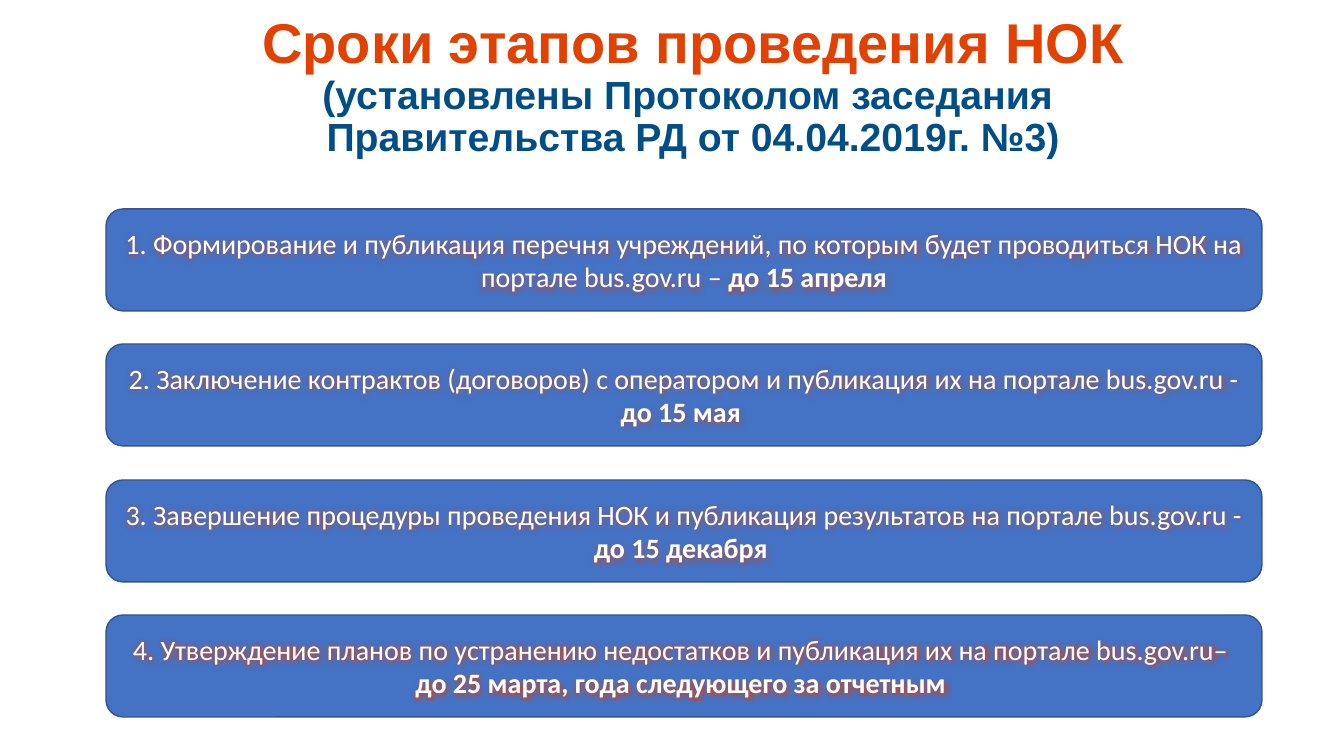
import pptx
import pptx.dml.color
import pptx.enum.shapes
import pptx.enum.text
import pptx.oxml
import pptx.oxml.ns
import pptx.util
from dataclasses import dataclass

EMU_PER_PX = 914400 / 100.8


def px(n):
    return pptx.util.Emu(round(n * EMU_PER_PX))


def rgb(value):
    return pptx.dml.color.RGBColor.from_string(value)


@dataclass
class Theme:
    heading: str = "E14101"
    subheading: str = "004E86"
    outline: str = "FFFFFF"
    box_fill: str = "4472C4"
    box_line: str = "325491"
    box_text: str = "FFFFFF"
    glow: str = "D0401A"
    title_font: str = "Arial"
    body_font: str = "Calibri"
    heading_size: int = 40
    subheading_size: int = 28
    body_size: int = 20


class Deck:
    def __init__(self, theme):
        self.theme = theme
        self.prs = pptx.Presentation()
        self.prs.slide_width, self.prs.slide_height = px(1344), px(756)
        self.s = None

    def add_slide(self):
        self.s = self.prs.slides.add_slide(self.prs.slide_layouts[5])

    def place(self, sp, x, y, w, h):
        box = {"left": x, "top": y, "width": w, "height": h}
        for name, value in box.items():
            setattr(sp, name, px(value))

    def frame(self, sp):
        tf = sp.text_frame
        fmt = {"word_wrap": True,
               "auto_size": pptx.enum.text.MSO_AUTO_SIZE.NONE,
               "vertical_anchor": pptx.enum.text.MSO_ANCHOR.MIDDLE}
        for name, value in fmt.items():
            setattr(tf, name, value)
        return tf

    def paragraph(self, tf, i, spacing=1.0):
        p = tf.add_paragraph() if i else tf.paragraphs[0]
        fmt = {"alignment": pptx.enum.text.PP_ALIGN.CENTER,
               "line_spacing": spacing}
        for name, value in fmt.items():
            setattr(p, name, value)
        return p

    def run(self, p, text, color, **fmt):
        r = p.add_run()
        r.text = text
        for name, value in fmt.items():
            setattr(r.font, name, value)
        r.font.color.rgb = rgb(color)
        return r.font.fill, r.font

    def outline(self, font):
        ln = pptx.oxml.parse_xml(
            f'<a:ln {pptx.oxml.ns.nsdecls("a")} w="9525"><a:solidFill>'
            f'<a:srgbClr val="{self.theme.outline}"/></a:solidFill></a:ln>')
        font._element.insert(0, ln)

    def glow(self, font, opacity):
        effect = pptx.oxml.parse_xml(
            f'<a:effectLst {pptx.oxml.ns.nsdecls("a")}><a:glow rad="63500">'
            f'<a:srgbClr val="{self.theme.glow}">'
            f'<a:alpha val="{opacity * 1000}"/></a:srgbClr></a:glow></a:effectLst>')
        rpr = font._element
        rpr.find(pptx.oxml.ns.qn("a:solidFill")).addnext(effect)

    def title(self, lines, x, y, w, h):
        sp = self.s.shapes.title
        self.place(sp, x, y, w, h)
        tf = self.frame(sp)
        for i, (text, size, color) in enumerate(lines):
            p = self.paragraph(tf, i, 0.9)
            _, font = self.run(p, text, color, name=self.theme.title_font,
                               size=pptx.util.Pt(size), bold=True)
            self.outline(font)

    def step(self, paragraphs, opacity, x, y, w, h):
        t = self.theme
        kind = pptx.enum.shapes.MSO_SHAPE.ROUNDED_RECTANGLE
        sp = self.s.shapes.add_shape(kind, px(x), px(y), px(w), px(h))
        sp.shadow.inherit = False
        sp.fill.solid()
        sp.fill.fore_color.rgb = rgb(t.box_fill)
        sp.line.color.rgb = rgb(t.box_line)
        sp.line.width = pptx.util.Pt(1)
        tf = self.frame(sp)
        for i, runs in enumerate(paragraphs):
            p = self.paragraph(tf, i)
            for text, bold in runs:
                _, font = self.run(p, text, t.box_text, name=t.body_font,
                                   size=pptx.util.Pt(t.body_size), bold=bold)
                self.glow(font, opacity)


# Steps: paragraphs of (text, bold) runs, and glow opacity in percent
STEPS = [
    ([[("1. Формирование и публикация перечня учреждений, по которым будет "
        "проводиться НОК на портале bus.gov.ru – ", False),
       ("до 15 апреля", True)]], 50),
    ([[("2. Заключение контрактов (договоров) с оператором и публикация их "
        "на портале bus.gov.ru - ", False),
       ("до 15 мая ", True)]], 50),
    ([[("3. Завершение процедуры проведения НОК и публикация результатов "
        "на портале bus.gov.ru - ", False),
       ("до 15 декабря ", True)]], 50),
    ([[("4. Утверждение планов по устранению недостатков и публикация их "
        "на портале bus.gov.ru– ", False)],
      [("до 25 марта, года следующего за отчетным ", True)]], 90),
]


def main():
    t = Theme()
    deck = Deck(t)
    deck.add_slide()

    # Heading
    deck.title([
        ("Сроки этапов проведения НОК", t.heading_size, t.heading),
        ("(установлены Протоколом заседания ", t.subheading_size, t.subheading),
        ("Правительства РД от 04.04.2019г. №3)", t.subheading_size, t.subheading),
    ], 116, -44, 1154, 263)

    # Evenly spaced steps
    first, last = 209, 615
    for i, (paragraphs, opacity) in enumerate(STEPS):
        top = first + round((last - first) * i / (len(STEPS) - 1))
        deck.step(paragraphs, opacity, 106, top, 1156, 102)

    deck.prs.save("out.pptx")


if __name__ == "__main__":
    main()
